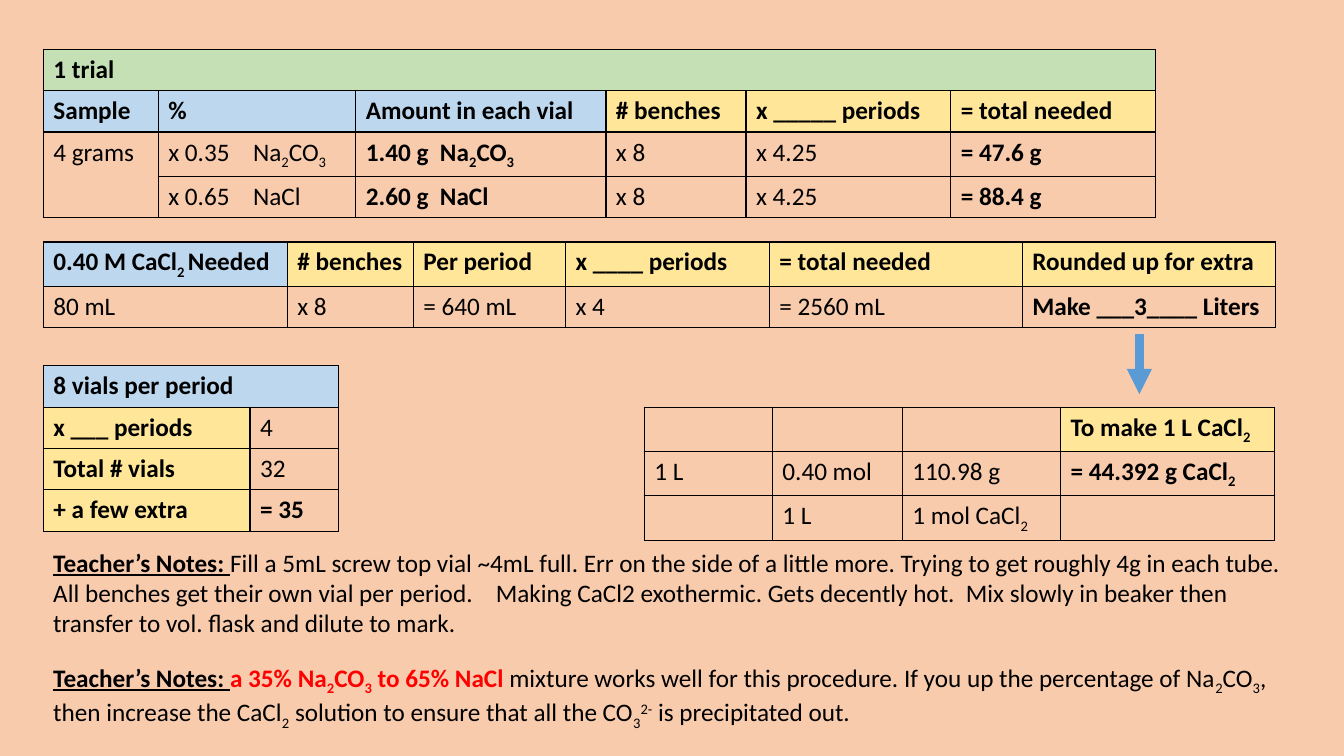
from lxml import etree
from pptx import Presentation
from pptx import util as u
from pptx.dml.color import RGBColor
from pptx.enum import shapes, text
from pptx.oxml.ns import qn

COLORS = {"back": "F8CBAD", "ink": "000000", "red": "FF0000", "arrow": "5B9BD5",
          "green": "C5E0B4", "blue": "BDD7EE", "yellow": "FFE699"}
LEFT = 0.43
ROW_HEIGHT = 0.41


def color(name):
    return RGBColor.from_string(COLORS[name])


# Cells: a plain string is regular text, a (text, fill) pair is bold
def bold(words):
    return words, None


def blue(words):
    return words, "blue"


def yellow(words):
    return words, "yellow"


class Sheet:
    font = "Calibri"
    size = 18

    def __init__(self, deck):
        self.page = deck.slides.add_slide(deck.slide_layouts[6])
        self.page.background.fill.solid()
        self.page.background.fill.fore_color.rgb = color("back")

    def add_spans(self, para, words, strong=False, underline=False, ink="ink"):
        """Odd parts between bars are subscripts, or superscripts after ^."""
        for index, part in enumerate(words.split("|")):
            if not part:
                continue
            span = para.add_run()
            span.text = part.lstrip("^")
            span.font.name = self.font
            span.font.size = u.Pt(self.size)
            span.font.bold = strong
            span.font.underline = underline
            span.font.color.rgb = color(ink)
            if index % 2:
                shift = "30000" if part.startswith("^") else "-25000"
                span._r.get_or_add_rPr().set("baseline", shift)

    def tab_stop(self, para, position):
        stops = etree.SubElement(para._p.get_or_add_pPr(), qn("a:tabLst"))
        etree.SubElement(stops, qn("a:tab"), pos=str(u.Inches(position)), algn="l")

    def border(self, cell):
        props = cell._tc.get_or_add_tcPr()
        for side in ("lnL", "lnR", "lnT", "lnB"):
            line = etree.SubElement(props, qn("a:" + side), w=str(u.Pt(1)))
            fill = etree.SubElement(line, qn("a:solidFill"))
            etree.SubElement(fill, qn("a:srgbClr"), val=COLORS["ink"])

    def table(self, left, top, widths, rows, merges=()):
        grid = self.page.shapes.add_table(
            len(rows), len(widths), u.Inches(left), u.Inches(top),
            u.Inches(sum(widths)), u.Inches(ROW_HEIGHT * len(rows))).table
        for column, width in zip(grid.columns, widths):
            column.width = u.Inches(width)
        for r, row in enumerate(rows):
            grid.rows[r].height = u.Inches(ROW_HEIGHT)
            for c in range(len(widths)):
                self.fill_cell(grid.cell(r, c), row[c] if c < len(row) else "")
        for first, last in merges:
            grid.cell(*first).merge(grid.cell(*last))

    def fill_cell(self, cell, content):
        strong = isinstance(content, tuple)
        words, fill = content if strong else (content, None)
        self.border(cell)
        if fill:
            cell.fill.solid()
            cell.fill.fore_color.rgb = color(fill)
        else:
            cell.fill.background()
        para = cell.text_frame.paragraphs[0]
        if "\t" in words:
            self.tab_stop(para, 0.84)
        self.add_spans(para, words, strong)

    def note(self, top, height, *spans, stop=None):
        box = self.page.shapes.add_textbox(
            u.Inches(LEFT), u.Inches(top), u.Inches(12.47), u.Inches(height))
        frame = box.text_frame
        frame.word_wrap = True
        frame.auto_size = text.MSO_AUTO_SIZE.SHAPE_TO_FIT_TEXT
        para = frame.paragraphs[0]
        if stop:
            self.tab_stop(para, stop)
        self.add_spans(para, "Teacher’s Notes: ", strong=True, underline=True)
        for words, style in spans:
            self.add_spans(para, words, **style)

    def arrow(self, x, top, bottom):
        arrow = self.page.shapes.add_connector(
            shapes.MSO_CONNECTOR.STRAIGHT,
            u.Inches(x), u.Inches(top), u.Inches(x), u.Inches(bottom))
        arrow.line.color.rgb = color("arrow")
        arrow.line.width = u.Pt(6)
        props = arrow._element.spPr
        etree.SubElement(props.find(qn("a:ln")), qn("a:tailEnd"), type="triangle")
        etree.SubElement(props, qn("a:effectLst"))


def main():
    deck = Presentation()
    deck.slide_width, deck.slide_height = u.Inches(13.33), u.Inches(7.5)
    sheet = Sheet(deck)

    # Solid samples for one trial
    sheet.table(LEFT, 0.49, [1.14, 1.96, 2.48, 1.39, 2.03, 2.03], [
        [("1 trial", "green")],
        [blue("Sample"), blue("%"), blue("Amount in each vial"),
         yellow("# benches"), yellow("x _____ periods"), yellow("= total needed")],
        ["4 grams", "x 0.35\tNa|2|CO|3", bold("1.40 g  Na|2|CO|3"),
         "x 8", "x 4.25", bold("= 47.6 g")],
        ["", "x 0.65\tNaCl", bold("2.60 g  NaCl"), "x 8", "x 4.25", bold("= 88.4 g")],
    ], merges=[((0, 0), (0, 5)), ((2, 0), (3, 0))])

    # Solution volume
    sheet.table(LEFT, 2.4, [2.42, 1.25, 1.51, 2.02, 2.51, 2.51], [
        [blue("0.40 M CaCl|2 |Needed"), yellow("# benches"), yellow("Per period"),
         yellow("x ____ periods"), yellow("= total needed"),
         yellow("Rounded up for extra")],
        ["80 mL", "x 8", "= 640 mL", "x 4", "= 2560 mL", bold("Make ___3____ Liters")],
    ])

    # Mass for one litre
    sheet.arrow(11.3, 3.31, 3.91)
    sheet.table(6.39, 4.04, [1.27, 1.29, 1.57, 2.12], [
        ["", "", "", yellow("To make 1 L CaCl|2")],
        ["1 L", "0.40 mol", "110.98 g", bold("= 44.392 g CaCl|2")],
        ["", "1 L", "1 mol CaCl|2", ""],
    ])

    # Vial count
    sheet.table(LEFT, 3.63, [2.05, 0.88], [
        [blue("8 vials per period")],
        [yellow("x ___ periods"), "4"],
        [yellow("Total # vials"), "32"],
        [yellow("+ a few extra"), bold("= 35")],
    ], merges=[((0, 0), (0, 1))])

    # Teacher's notes
    sheet.note(5.38, 1.01, (
        "Fill a 5mL screw top vial ~4mL full. Err on the side of a little more. "
        "Trying to get roughly 4g in each tube. All benches get their own vial per "
        "period.\tMaking CaCl2 exothermic. Gets decently hot.  Mix slowly in beaker "
        "then transfer to vol. flask and dilute to mark.", {}), stop=4.39)
    sheet.note(6.52, 0.71, (
        "a 35% Na|2|CO|3| to 65% NaCl ", {"strong": True, "ink": "red"}), (
        "mixture works well for this procedure. If you up the percentage of "
        "Na|2|CO|3|, then increase the CaCl|2| solution to ensure that all the "
        "CO|3||^2-| is precipitated out.", {}))

    deck.save("out.pptx")


if __name__ == "__main__":
    main()
